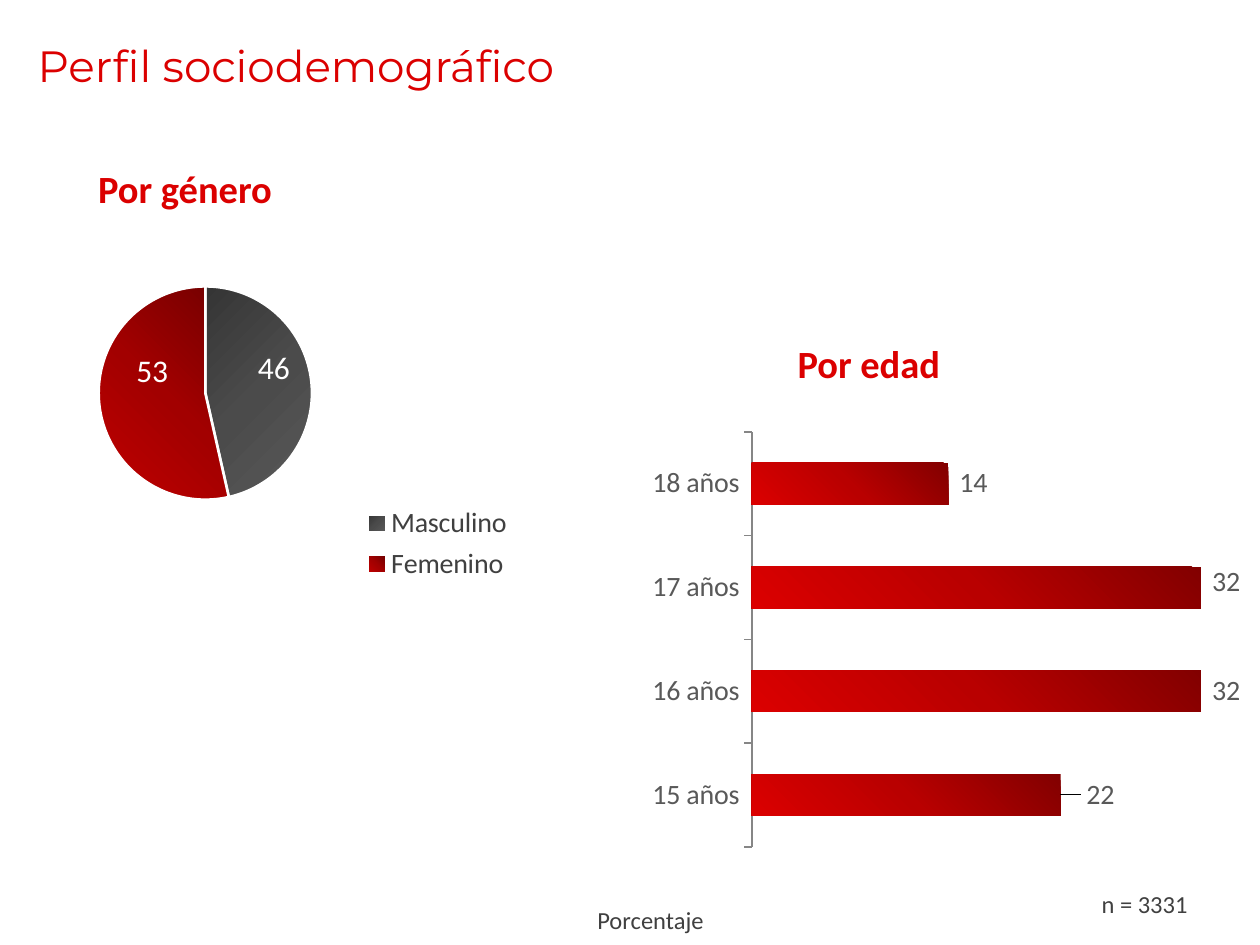
import copy
from dataclasses import dataclass
from typing import Any, Optional

import pptx
import pptx.chart.data
import pptx.dml.color
import pptx.enum.chart
import pptx.enum.text
import pptx.oxml
import pptx.oxml.ns
import pptx.util

Cm = pptx.util.Cm
Pt = pptx.util.Pt
RGBColor = pptx.dml.color.RGBColor
Align = pptx.enum.text.PP_ALIGN
LabelPosition = pptx.enum.chart.XL_LABEL_POSITION

RED = RGBColor(0xDB, 0x00, 0x00)
DARK_GREY = RGBColor(0x40, 0x40, 0x40)
GREY = RGBColor(0x59, 0x59, 0x59)
AXIS_GREY = RGBColor(0x86, 0x86, 0x86)
WHITE = RGBColor(0xFF, 0xFF, 0xFF)
BLACK = RGBColor(0x00, 0x00, 0x00)
MALE_SHADES = (RGBColor(0x35, 0x35, 0x35), RGBColor(0x4B, 0x4B, 0x4B), GREY)
FEMALE_SHADES = (RGBColor(0x72, 0, 0), RGBColor(0xA2, 0, 0), RGBColor(0xC0, 0, 0))
AGE_SHADES = (RGBColor(0x82, 0, 0), RGBColor(0xB9, 0, 0), RED)

NUMBER_FORMAT = '_-* #,##0_-;\\-* #,##0_-;_-* "-"??_-;_-@_'

HEADING = {"name": "Calibri", "size": Pt(22), "bold": True}
NOTE = {"name": "Calibri", "size": Pt(14), "bold": False}
TITLE = {"name": "Montserrat", "size": Pt(25), "bold": False}
CHART_TEXT = {"name": "Calibri", "size": Pt(18), "bold": False}
SMALL_CHART_TEXT = {"name": "Calibri", "size": Pt(16), "bold": False}


@dataclass
class Label:
    text: str
    box: tuple[float, float, float, float]
    style: dict[str, Any]
    color: RGBColor
    align: Align = Align.CENTER
    middle: bool = True
    wrap: bool = True


@dataclass
class ChartPlan:
    kind: pptx.enum.chart.XL_CHART_TYPE
    box: tuple[float, float, float, float]
    values: dict[str, int]
    plot: tuple[float, float, float, float]
    label_style: dict[str, Any]
    label_color: RGBColor
    label_position: LabelPosition
    label_shifts: tuple[tuple[float, float], ...]


LABELS = [
    Label("Porcentaje", (9.09, 18.03, 8.05, 1.02), NOTE, DARK_GREY),
    Label("n = 3331", (21.26, 17.7, 3.63, 1.02), NOTE, DARK_GREY),
    Label("Perfil sociodemográfico", (0.51, 0.25, 19.23, 2.11), TITLE, RED, Align.LEFT),
    Label("Por género", (1.7, 3.2, 4.06, 1.19), HEADING, RED, middle=False, wrap=False),
    Label("Por edad", (15.8, 6.73, 3.43, 1.19), HEADING, RED, middle=False, wrap=False),
]

GENDER = ChartPlan(
    pptx.enum.chart.XL_CHART_TYPE.PIE, (0.51, 3.25, 10.52, 9.35),
    {"Masculino": 46, "Femenino": 53}, (0.14, 0.27, 0.41, 0.46),
    CHART_TEXT, WHITE, LabelPosition.CENTER, ((0.03, -0.04), (0, -0.06)),
)
AGE = ChartPlan(
    pptx.enum.chart.XL_CHART_TYPE.BAR_CLUSTERED, (11.02, 8.61, 14.78, 9.73),
    {"15 años": 22, "16 años": 32, "17 años": 32, "18 años": 14},
    (0.28, 0.01, 0.67, 0.86),
    SMALL_CHART_TEXT, GREY, LabelPosition.OUTSIDE_END,
    ((0.02, 0), (0, 0), (0, -0.01), (0, 0)),
)


def style_font(font: Any, style: dict[str, Any], color: RGBColor) -> None:
    for attribute, value in style.items():
        setattr(font, attribute, value)
    font.color.rgb = color


def add_label(slide: Any, label: Label) -> None:
    frame = slide.shapes.add_textbox(*map(Cm, label.box)).text_frame
    frame.word_wrap = label.wrap
    if label.middle:
        frame.vertical_anchor = pptx.enum.text.MSO_ANCHOR.MIDDLE
    else:
        frame.auto_size = pptx.enum.text.MSO_AUTO_SIZE.SHAPE_TO_FIT_TEXT
    paragraph = frame.paragraphs[0]
    paragraph.alignment = label.align
    run = paragraph.add_run()
    run.text = label.text
    style_font(run.font, label.style, label.color)


def make_layout(numbers: tuple[float, ...], target: Optional[str] = None) -> Any:
    parts = [("layoutTarget", target)] if target else []
    if len(numbers) == 4:
        parts += [("xMode", "edge"), ("yMode", "edge")]
    parts += zip("xywh", numbers)
    inner = "".join(f'<c:{tag} val="{value}"/>' for tag, value in parts)
    return pptx.oxml.parse_xml(
        f'<c:layout {pptx.oxml.ns.nsdecls("c")}>'
        f"<c:manualLayout>{inner}</c:manualLayout></c:layout>"
    )


def shade(owner: Any, element: Any, colors: tuple[RGBColor, ...], angle: int) -> None:
    fill = owner.format.fill
    fill.gradient()
    fill.gradient_angle = 360 - angle
    stop_list = element.xpath("./c:spPr/a:gradFill/a:gsLst")[0]
    stop_list.append(copy.deepcopy(stop_list[0]))
    for index, (stop, color) in enumerate(zip(fill.gradient_stops, colors)):
        stop.position = index / 2
        stop.color.rgb = color


def add_chart(slide: Any, plan: ChartPlan) -> Any:
    data = pptx.chart.data.CategoryChartData(number_format=NUMBER_FORMAT)
    data.categories = list(plan.values)
    data.add_series("Series 1", list(plan.values.values()))
    chart = slide.shapes.add_chart(plan.kind, *map(Cm, plan.box), data).chart
    chart.has_title = False
    chart.has_legend = False
    style_font(chart.font, CHART_TEXT, BLACK)

    plot_area = chart.element.xpath(".//c:plotArea")[0]
    for old_layout in plot_area.xpath("./c:layout"):
        plot_area.remove(old_layout)
    plot_area.insert(0, make_layout(plan.plot, "inner"))

    plot = chart.plots[0]
    plot.vary_by_categories = False
    series = plot.series[0]
    labels = series.data_labels
    formats = {
        "show_value": True, "show_percentage": False, "number_format": NUMBER_FORMAT,
        "number_format_is_linked": False, "position": plan.label_position,
    }
    for attribute, value in formats.items():
        setattr(labels, attribute, value)
    style_font(labels.font, plan.label_style, plan.label_color)
    number_format = labels._element.xpath("./c:numFmt")[0]
    for index, shift in enumerate(plan.label_shifts):
        point_label = series.points[index].data_label
        style_font(point_label.font, plan.label_style, plan.label_color)
        point_label.position = plan.label_position
        element = series._element.xpath(f"./c:dLbls/c:dLbl[c:idx/@val='{index}']")[0]
        element.insert(1, make_layout(shift))
        element.insert(2, copy.deepcopy(number_format))
    return chart


def add_gender_chart(slide: Any) -> None:
    chart = add_chart(slide, GENDER)
    chart.plots[0].vary_by_categories = True
    series = chart.plots[0].series[0]
    for index, (colors, angle) in enumerate([(MALE_SHADES, 45), (FEMALE_SHADES, 135)]):
        slice_point = series.points[index]
        slice_point.format.line.color.rgb = WHITE
        slice_point.format.line.width = Pt(1.5)
        element = series._element.xpath(f"./c:dPt[c:idx/@val='{index}']")[0]
        shade(slice_point, element, colors, angle)
    chart.has_legend = True
    legend = chart.legend
    legend.position = pptx.enum.chart.XL_LEGEND_POSITION.RIGHT
    legend.include_in_layout = False
    style_font(legend.font, SMALL_CHART_TEXT, DARK_GREY)
    for old_layout in legend._element.xpath("./c:layout"):
        legend._element.remove(old_layout)
    legend._element.insert(1, make_layout((0.61, 0.73, 0.36, 0.19)))


def add_age_chart(slide: Any) -> None:
    chart = add_chart(slide, AGE)
    plot = chart.plots[0]
    plot.gap_width = 150
    shade(plot.series[0], plot.series[0]._element, AGE_SHADES, 135)
    scale = {"minimum_scale": 0, "maximum_scale": 35,
             "has_major_gridlines": False, "visible": False}
    for attribute, value in scale.items():
        setattr(chart.value_axis, attribute, value)
    ages = chart.category_axis
    ages.major_tick_mark = pptx.enum.chart.XL_TICK_MARK.OUTSIDE
    ages.format.line.color.rgb = AXIS_GREY
    ages.format.line.width = Pt(0.75)
    style_font(ages.tick_labels.font, SMALL_CHART_TEXT, GREY)


def main() -> None:
    deck = pptx.Presentation()
    deck.slide_width, deck.slide_height = Cm(25.4), Cm(19.05)
    slide = deck.slides.add_slide(deck.slide_layouts[6])
    add_gender_chart(slide)
    add_age_chart(slide)
    for label in LABELS:
        add_label(slide, label)
    deck.save("out.pptx")


if __name__ == "__main__":
    main()
